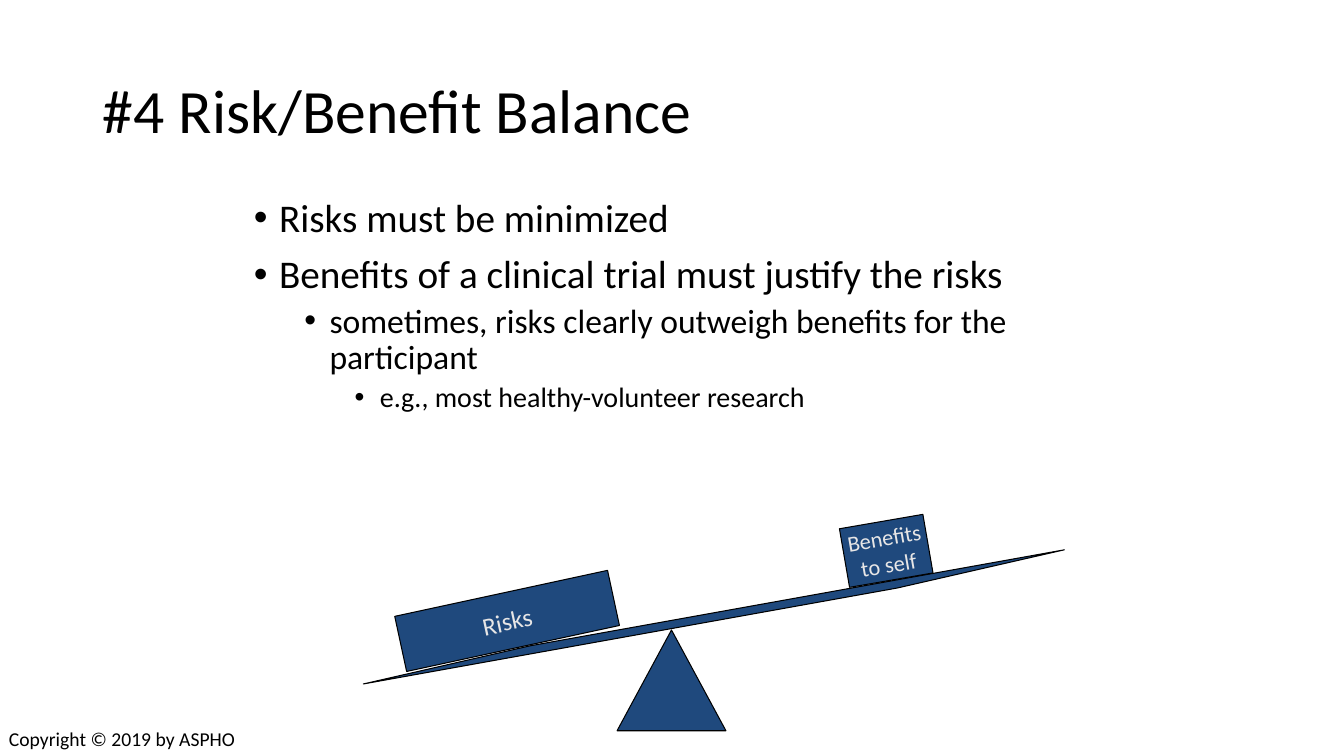
from pptx import Presentation
from pptx import util as u
from pptx.dml.color import RGBColor
from pptx.enum import shapes, text
from pptx.oxml.ns import qn
from lxml import etree

PX = 9144  # EMU per px, 100 px to the inch
FONT = "Calibri"
COLORS = {"ink": "000000", "navy": "1F497D", "pale": "E7E6E6", "paper": "FFFFFF"}


def color(name):
    return RGBColor.from_string(COLORS[name])


def px(*lengths):
    return [u.Emu(length * PX) for length in lengths]


def add_bullet(para, level):
    """Hang a bullet 25 px to the left of the text of its level."""
    props = para._p.get_or_add_pPr()
    left, indent = px(25 + 50 * level, -25)
    props.set("marL", str(left))
    props.set("indent", str(indent))
    etree.SubElement(props, qn("a:buFont")).set("typeface", "Arial")
    etree.SubElement(props, qn("a:buChar")).set("char", "•")


def write(para, words, size, ink="ink", align=text.PP_ALIGN.LEFT,
          spacing=None, before=0, bullet_level=None):
    if bullet_level is not None:
        para.level = bullet_level
        add_bullet(para, bullet_level)
    para.alignment = align
    para.line_spacing = spacing
    para.space_before = u.Pt(before)
    span = para.add_run()
    span.text = words
    span.font.name = FONT
    span.font.size = u.Pt(size)
    span.font.color.rgb = color(ink)


def paragraphs(frame, count):
    """Return the first paragraph of the frame and as many new ones as needed."""
    return [frame.paragraphs[0]] + [frame.add_paragraph() for _ in range(count - 1)]


def add_title(page, box):
    title = page.shapes.title
    title.left, title.top, title.width, title.height = px(*box)
    frame = title.text_frame
    frame.auto_size = text.MSO_AUTO_SIZE.NONE
    frame.vertical_anchor = text.MSO_ANCHOR.MIDDLE
    write(frame.paragraphs[0], "#4 Risk/Benefit Balance", 44, spacing=0.9)


def add_points(page, box):
    points = [
        (0, "Risks must be minimized"),
        (0, "Benefits of a clinical trial must justify the risks"),
        (1, "sometimes, risks clearly outweigh benefits for the participant"),
        (2, "e.g., most healthy-volunteer research"),
    ]
    frame = page.shapes.add_textbox(*px(*box)).text_frame
    frame.word_wrap = True
    for index, para in enumerate(paragraphs(frame, len(points))):
        level, words = points[index]
        before = 0 if index == 0 else 5 if level else 10
        write(para, words, 28 - 4 * level, spacing=0.9, before=before, bullet_level=level)


def add_piece(group, kind, box, rotation=0, lines=(), size=18):
    piece = group.shapes.add_shape(kind, *px(*box))
    piece.rotation = rotation
    piece.shadow.inherit = False
    piece.fill.solid()
    piece.fill.fore_color.rgb = color("navy")
    piece.line.color.rgb = color("ink")
    piece.line.width = u.Pt(0.75)
    if lines:
        frame = piece.text_frame
        frame.word_wrap = False
        frame.vertical_anchor = text.MSO_ANCHOR.MIDDLE
        for para, words in zip(paragraphs(frame, len(lines)), lines):
            write(para, words, size, ink="pale", align=text.PP_ALIGN.CENTER)
    return piece


def add_seesaw(page, box):
    left, top, width, height = box
    kinds = shapes.MSO_SHAPE
    group = page.shapes.add_group_shape()

    # Fulcrum at the foot of the box
    add_piece(group, kinds.ISOSCELES_TRIANGLE, (left + 258, top + height - 100, 108, 100))

    # Plank across the box
    plank = add_piece(group, kinds.PARALLELOGRAM, (left, top + 91, width, 8), 349.8)
    plank.adjustments[0] = 21.25

    # Loads
    add_piece(group, kinds.RECTANGLE, (left + 41, top + 71, 216, 56), 347.8, ["Risks"])
    add_piece(group, kinds.RECTANGLE, (left + 483, top, 84, 59), 350.2,
              ["Benefits", "to self"], 16)


def add_copyright(page, box):
    frame = page.shapes.add_textbox(*px(*box)).text_frame
    frame.word_wrap = False
    write(frame.paragraphs[0], "Copyright © 2019 by ASPHO", 14)


def main():
    deck = Presentation()
    deck.slide_width, deck.slide_height = px(1333, 750)
    page = deck.slides.add_slide(deck.slide_layouts[5])
    page.background.fill.solid()
    page.background.fill.fore_color.rgb = color("paper")

    add_title(page, (92, 40, 1150, 145))
    add_points(page, (242, 192, 850, 292))
    add_seesaw(page, (354, 517, 708, 208))
    add_copyright(page, (-1, 716, 248, 34))
    deck.save("out.pptx")


if __name__ == "__main__":
    main()
